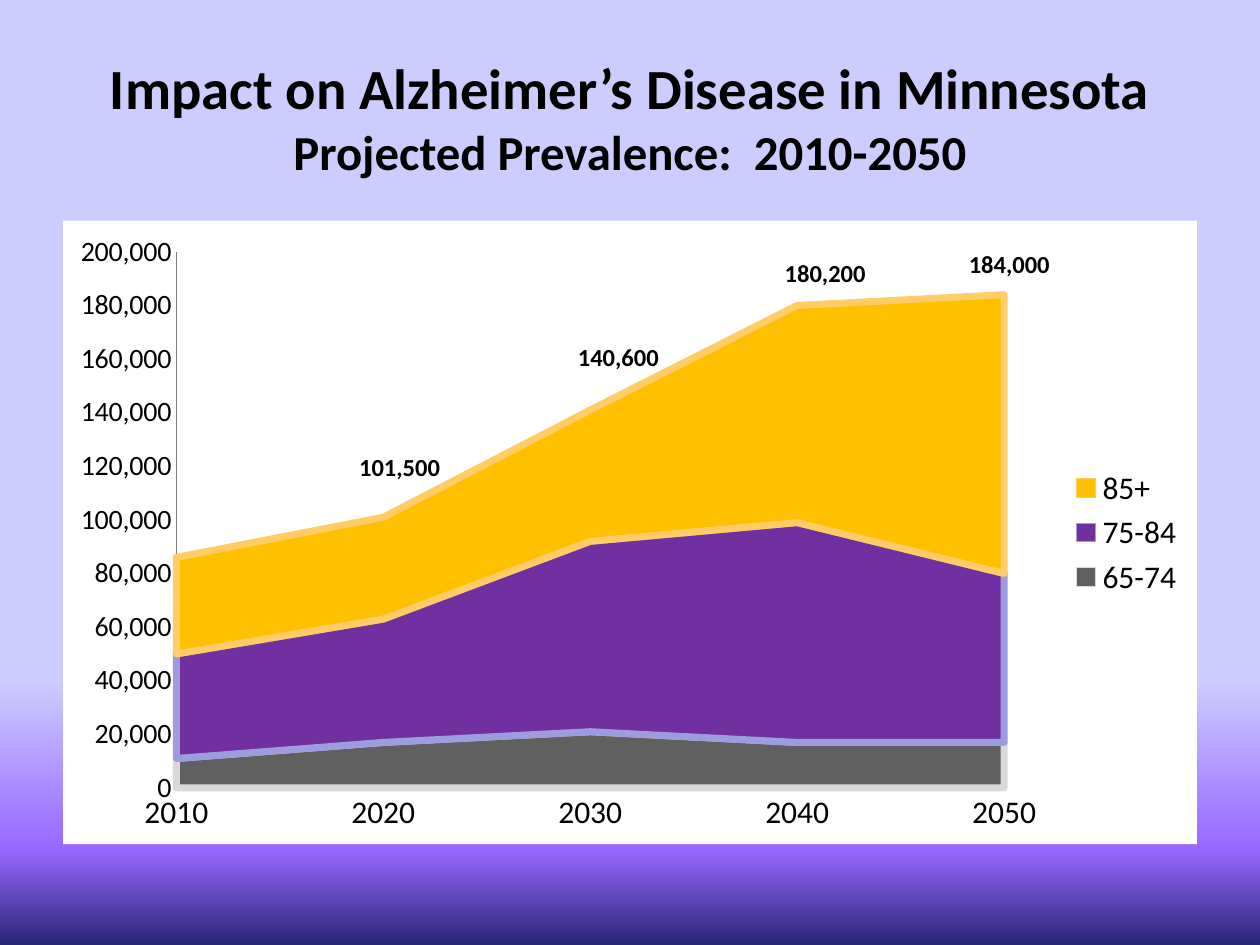
from lxml.etree import SubElement
from pptx import Presentation
from pptx.chart.data import CategoryChartData
from pptx.dml.color import RGBColor
from pptx.enum.chart import XL_CHART_TYPE, XL_LEGEND_POSITION, XL_TICK_MARK
from pptx.enum.text import MSO_ANCHOR, MSO_AUTO_SIZE, PP_ALIGN
from pptx.oxml import parse_xml
from pptx.oxml.ns import nsdecls, qn
from pptx.util import Cm, Pt

FONT = "Calibri"
COLORS = {
    "text": "000000", "panel": "FFFFFF", "axis": "808080",
    "lavender": "CCCCFF", "violet": "9966FF", "navy": "262673",
}


def style_font(font, size, bold=False):
    font.name = FONT
    font.size = Pt(size)
    font.bold = bold
    font.color.rgb = RGBColor.from_string(COLORS["text"])


presentation = Presentation()
presentation.slide_width = Cm(25.4)
presentation.slide_height = Cm(19.05)
slide = presentation.slides.add_slide(presentation.slide_layouts[5])

# Background gradient, top to bottom
background_fill = slide.background.fill
background_fill.gradient()
background_fill.gradient_angle = 270
stop_list = slide.element.find(".//" + qn("a:gsLst"))
for stop in list(stop_list):
    stop_list.remove(stop)
for percent, color in ((0, "lavender"), (72, "lavender"), (90, "violet"), (100, "navy")):
    stop = SubElement(stop_list, qn("a:gs"), pos=str(percent * 1000))
    SubElement(stop, qn("a:srgbClr"), val=COLORS[color])

# Title
title = slide.shapes.title
title.left, title.top, title.width, title.height = Cm(1.27), Cm(0.76), Cm(22.86), Cm(3.18)
title_frame = title.text_frame
title_frame.vertical_anchor = MSO_ANCHOR.MIDDLE
paragraph = title_frame.paragraphs[0]
paragraph.alignment = PP_ALIGN.CENTER
heading = paragraph.add_run()
heading.text = "Impact on Alzheimer’s Disease in Minnesota"
style_font(heading.font, 32.4, bold=True)
paragraph.add_line_break()
subheading = paragraph.add_run()
subheading.text = "Projected Prevalence:  2010-2050"
style_font(subheading.font, 27.9, bold=True)

# Stacked area chart: name, values, fill, outline
age_groups = [
    ("65-74", (11000, 17000, 21000, 17000, 17000), "606060", "D9D9D9"),
    ("75-84", (39000, 46000, 71000, 82000, 63000), "7030A0", "9C9CDF"),
    ("85+", (36000, 38000, 49000, 81000, 104000), "FFC000", "FFCC66"),
]
chart_data = CategoryChartData(number_format="#,##0")
chart_data.categories = ["2010", "2020", "2030", "2040", "2050"]
for name, values, _, _ in age_groups:
    chart_data.add_series(name, values)
chart = slide.shapes.add_chart(
    XL_CHART_TYPE.AREA_STACKED, Cm(1.27), Cm(4.45), Cm(22.86), Cm(12.57), chart_data
).chart
style_font(chart.font, 18)
chart.has_title = False
chart.has_legend = True
chart.legend.position = XL_LEGEND_POSITION.RIGHT
chart.legend.include_in_layout = False

for series, (_, _, fill, outline) in zip(chart.plots[0].series, age_groups):
    series.format.fill.solid()
    series.format.fill.fore_color.rgb = RGBColor.from_string(fill)
    series.format.line.color.rgb = RGBColor.from_string(outline)
    series.format.line.width = Pt(4)

for axis in (chart.category_axis, chart.value_axis):
    axis.has_major_gridlines = False
    axis.major_tick_mark = axis.minor_tick_mark = XL_TICK_MARK.NONE
    axis.format.line.color.rgb = RGBColor.from_string(COLORS["axis"])
    axis.format.line.width = Pt(0.75)
value_axis = chart.value_axis
value_axis.minimum_scale = 0
value_axis.maximum_scale = 200000
value_axis.major_unit = 20000
value_axis.tick_labels.number_format = "#,##0"
value_axis.tick_labels.number_format_is_linked = False
style_font(value_axis.tick_labels.font, 16)

# White chart panel and fixed plot position
chart_element = chart.element.find(qn("c:chart")) if hasattr(chart, "element") else chart._chartSpace.find(qn("c:chart"))
chart_element.addnext(parse_xml(
    f'<c:spPr {nsdecls("c", "a")}><a:solidFill><a:srgbClr val="{COLORS["panel"]}"/></a:solidFill>'
    "<a:ln><a:noFill/></a:ln></c:spPr>"
))
plot_area = chart_element.find(qn("c:plotArea"))
plot_area.find(".//" + qn("c:crossBetween")).set("val", "midCat")
for old_layout in plot_area.findall(qn("c:layout")):
    plot_area.remove(old_layout)
layout = parse_xml(f'<c:layout {nsdecls("c")}><c:manualLayout/></c:layout>')
for tag, value in (
    ("layoutTarget", "inner"), ("xMode", "edge"), ("yMode", "edge"),
    ("x", "0.1"), ("y", "0.05"), ("w", "0.73"), ("h", "0.86"),
):
    SubElement(layout[0], qn(f"c:{tag}"), val=value)
plot_area.insert(0, layout)

# Totals above the areas
for total, left, top in (
    ("101,500", 6.99, 8.99), ("140,600", 11.4, 6.78),
    ("180,200", 15.57, 5.08), ("184,000", 19.28, 4.9),
):
    label = slide.shapes.add_textbox(Cm(left), Cm(top), Cm(2.16), Cm(0.86))
    label.text_frame.word_wrap = False
    label.text_frame.auto_size = MSO_AUTO_SIZE.SHAPE_TO_FIT_TEXT
    paragraph = label.text_frame.paragraphs[0]
    paragraph.text = total
    style_font(paragraph.font, 14, bold=True)

presentation.save("out.pptx")
